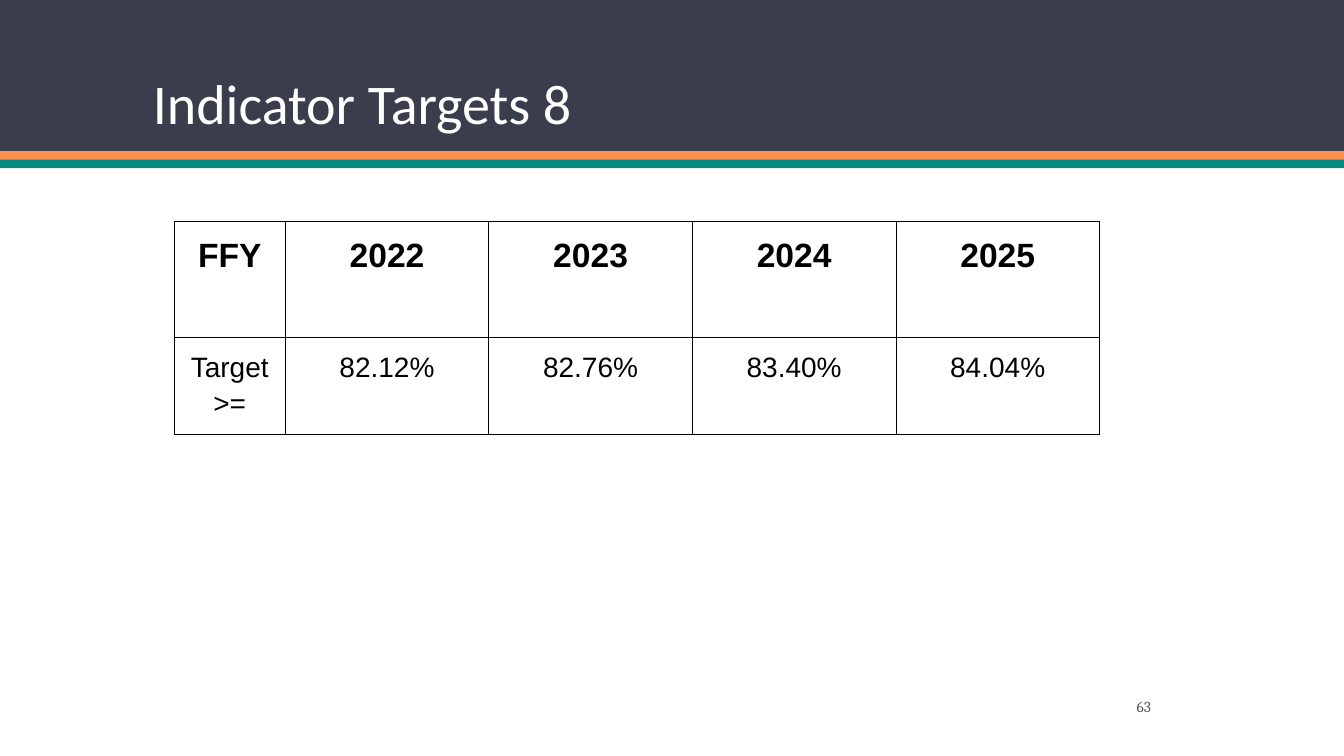
"""Build the Indicator Targets 8 slide."""
from dataclasses import dataclass

from lxml.etree import SubElement as Sub
from pptx import Presentation
from pptx.dml.color import RGBColor
from pptx.enum.shapes import MSO_SHAPE as Shape
from pptx.enum.text import MSO_ANCHOR as Anchor, PP_ALIGN as Align
from pptx.oxml.ns import qn
from pptx.util import Cm, Pt

WIDTH = 33.87


@dataclass
class Band:
    top: float
    height: float
    color: str


@dataclass
class Style:
    font: str
    size: int
    color: str
    bold: bool = False


@dataclass
class Row:
    height: float
    style: Style
    cells: tuple[str, ...]


BANDS = [
    Band(0, 3.81, "3A3D4B"),
    Band(3.81, 0.21, "FF914D"),
    Band(4.02, 0.22, "048A81"),
]
TITLE = Style("Calibri", 40, "FFFFFF")
NUMBER = Style("Cambria", 11, "595959")
ROWS = [
    Row(2.92, Style("Arial", 24, "000000", True),
        ("FFY", "2022", "2023", "2024", "2025")),
    Row(2.33, Style("Arial", 20, "000000"),
        ("Target >=", "82.12%", "82.76%", "83.40%", "84.04%")),
]
COLS = [2.8] + [5.13] * 4


def paint(item, color: str) -> None:
    item.fill.solid()
    item.fill.fore_color.rgb = RGBColor.from_string(color)


def write(para, text: str, style: Style) -> None:
    run = para.add_run()
    run.text = text
    font = run.font
    font.name, font.size, font.bold = style.font, Pt(style.size), style.bold
    font.color.rgb = RGBColor.from_string(style.color)


def add_band(slide, band: Band) -> None:
    bar = slide.shapes.add_shape(
        Shape.RECTANGLE, 0, Cm(band.top), Cm(WIDTH), Cm(band.height))
    bar.shadow.inherit = False
    paint(bar, band.color)
    bar.line.fill.background()


def add_title(slide) -> None:
    title = slide.shapes.title
    title.element.getparent().append(title.element)
    title.left, title.top = Cm(3.6), Cm(0.71)
    title.width, title.height = Cm(26.67), Cm(2.87)
    title.text_frame.vertical_anchor = Anchor.BOTTOM
    para = title.text_frame.paragraphs[0]
    para.alignment, para.line_spacing = Align.LEFT, 0.9
    write(para, "Indicator Targets 8", TITLE)


def add_number(slide) -> None:
    box = slide.shapes.add_textbox(Cm(25.45), Cm(17.42), Cm(3.81), Cm(0.76))
    frame = box.text_frame
    frame.word_wrap, frame.vertical_anchor = True, Anchor.MIDDLE
    para = frame.paragraphs[0]
    para.alignment = Align.RIGHT
    write(para, "63", NUMBER)


def add_border(cell, color: str) -> None:
    props = cell._tc.get_or_add_tcPr()
    for side in ("lnL", "lnR", "lnT", "lnB"):
        line = Sub(props, qn(f"a:{side}"), w=str(Pt(0.72)))
        fill = Sub(line, qn("a:solidFill"))
        Sub(fill, qn("a:srgbClr"), val=color)


def fill_cell(cell, text: str, style: Style) -> None:
    cell.margin_left = cell.margin_right = Cm(0.18)
    cell.margin_top = cell.margin_bottom = Cm(0.25)
    add_border(cell, "000000")
    cell.fill.background()
    para = cell.text_frame.paragraphs[0]
    para.alignment, para.line_spacing = Align.CENTER, 1.15
    para.space_after = Pt(12)
    write(para, text, style)


def add_grid(slide) -> None:
    height = sum(row.height for row in ROWS)
    grid = slide.shapes.add_table(
        len(ROWS), len(COLS), Cm(4.39), Cm(5.59),
        Cm(sum(COLS)), Cm(height)).table
    grid.first_row = grid.horz_banding = False
    for col, width in zip(grid.columns, COLS):
        col.width = Cm(width)
    for line, row in zip(grid.rows, ROWS):
        line.height = Cm(row.height)
        for cell, text in zip(line.cells, row.cells):
            fill_cell(cell, text, row.style)


def main() -> None:
    deck = Presentation()
    deck.slide_width, deck.slide_height = Cm(WIDTH), Cm(19.05)
    slide = deck.slides.add_slide(deck.slide_layouts[5])
    for band in BANDS:
        add_band(slide, band)
    add_title(slide)
    add_number(slide)
    add_grid(slide)
    deck.save("out.pptx")


if __name__ == "__main__":
    main()
